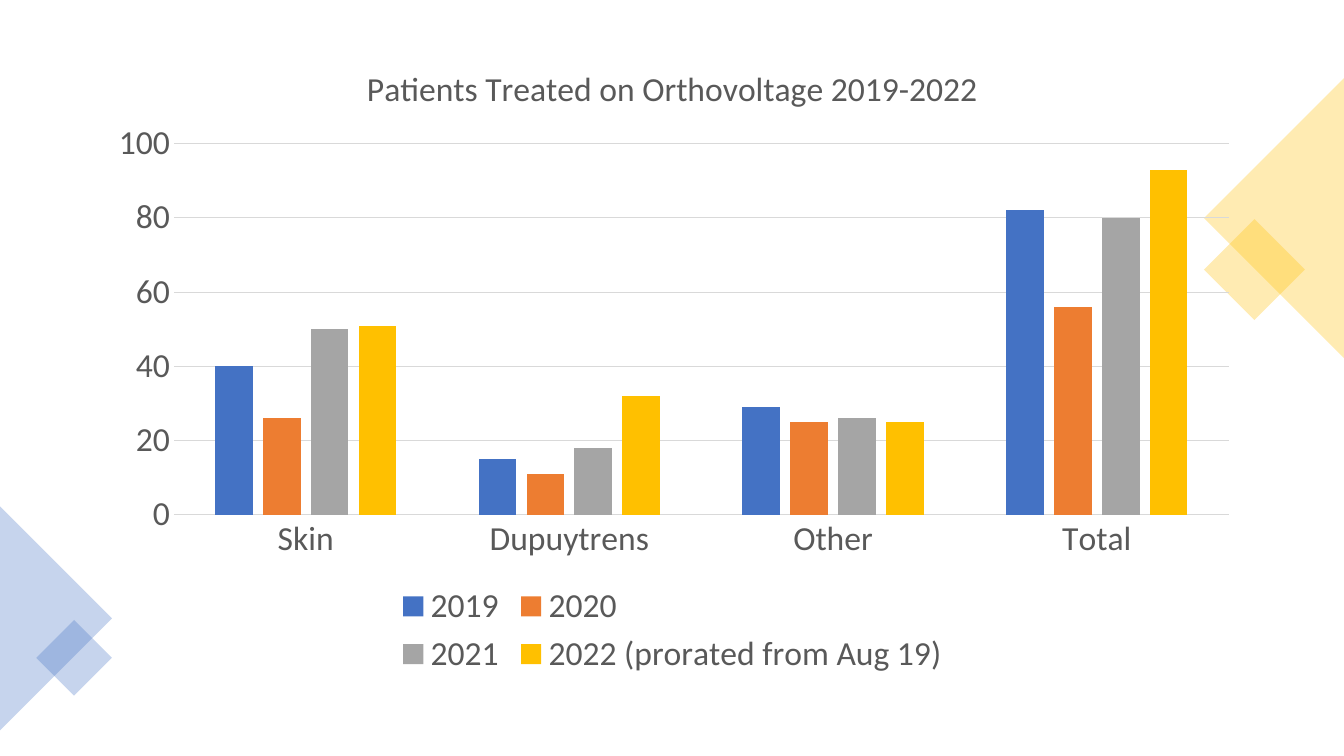
from lxml.etree import SubElement
from pptx import Presentation
from pptx.chart.data import CategoryChartData
from pptx.dml.color import RGBColor
from pptx.enum.chart import XL_CHART_TYPE, XL_LEGEND_POSITION, XL_TICK_MARK
from pptx.enum.shapes import MSO_SHAPE
from pptx.oxml import parse_xml
from pptx.oxml.ns import nsdecls, qn
from pptx.util import Pt

TITLE = "Patients Treated on Orthovoltage 2019-2022"
CATEGORIES = ["Skin", "Dupuytrens", "Other", "Total"]
SERIES = [
    ("2019", [40, 15, 29, 82], "blue"),
    ("2020", [26, 11, 25, 56], "orange"),
    ("2021", [50, 18, 26, 80], "gray"),
    ("2022 (prorated from Aug 19)", [51, 32, 25, 93], "gold"),
]
THEME = {
    "blue": "4472C4", "orange": "ED7D31", "gray": "A5A5A5", "gold": "FFC000",
    "text": "595959", "line": "D9D9D9",
    "font": "Calibri", "size": 24, "line_width": 0.75, "alpha": 30,
}
SLIDE_SIZE = (960, 540)
CHART_BOX = (66.24, 29.52, 828, 457.2)
PLOT_LAYOUT = {"x": 0.07, "y": 0.16, "w": 0.91, "h": 0.58}

# Each corner: colour, rotation, triangle centre and depth, square centre and side
CORNERS = [
    ("gold", 270, (910, 155.8), 100, (896, 192.6), 51),
    ("blue", 90, (40, 441.7), 80, (52.9, 469.9), 38.2),
]


def color(name):
    return RGBColor.from_string(THEME[name])


def set_format(target, values):
    for name, value in values.items():
        setattr(target, name, value)


def style_font(font):
    set_format(font, {"name": THEME["font"], "size": Pt(THEME["size"]), "bold": False})
    font.color.rgb = color("text")


def style_line(line):
    line.color.rgb = color("line")
    line.width = Pt(THEME["line_width"])


def add_diamond_part(slide, preset, center, size, rotation, color_name):
    """Add a translucent, rotated shape placed by its centre."""
    left, top = (middle - length / 2 for middle, length in zip(center, size))
    shape = slide.shapes.add_shape(preset, Pt(left), Pt(top), *map(Pt, size))
    shape.rotation = rotation
    shape.shadow.inherit = False
    shape.line.fill.background()
    shape.fill.solid()
    shape.fill.fore_color.rgb = color(color_name)
    rgb = shape.fill._xPr.find(f".//{qn('a:srgbClr')}")
    SubElement(rgb, qn("a:alpha")).set("val", str(THEME["alpha"] * 1000))


def add_corners(slide):
    for name, turn, triangle_center, depth, square_center, side in CORNERS:
        add_diamond_part(slide, MSO_SHAPE.ISOSCELES_TRIANGLE, triangle_center,
                         (2 * depth, depth), turn, name)
        add_diamond_part(slide, MSO_SHAPE.RECTANGLE, square_center, (side, side), 45, name)


def no_fill():
    return parse_xml(f"<c:spPr {nsdecls('c', 'a')}><a:noFill/><a:ln><a:noFill/></a:ln></c:spPr>")


def place_plot(chart):
    """Fix the inner plot area and make the chart see-through."""
    chart_element = chart.element.find(qn("c:chart"))
    plot_area = chart_element.find(qn("c:plotArea"))
    for old_layout in plot_area.findall(qn("c:layout")):
        plot_area.remove(old_layout)
    layout = parse_xml(f"<c:layout {nsdecls('c')}><c:manualLayout/></c:layout>")
    settings = {"layoutTarget": "inner", "xMode": "edge", "yMode": "edge", **PLOT_LAYOUT}
    for name, value in settings.items():
        SubElement(layout[0], qn(f"c:{name}")).set("val", str(value))
    plot_area.insert(0, layout)
    plot_area.append(no_fill())
    chart_element.addnext(no_fill())


def add_patient_chart(slide):
    data = CategoryChartData()
    data.categories = CATEGORIES
    for name, values, _ in SERIES:
        data.add_series(name, values)
    chart = slide.shapes.add_chart(
        XL_CHART_TYPE.COLUMN_CLUSTERED, *map(Pt, CHART_BOX), data).chart
    style_font(chart.font)

    title_frame = chart.chart_title.text_frame
    title_frame.text = TITLE
    style_font(title_frame.paragraphs[0].runs[0].font)
    chart.chart_title.include_in_layout = False

    chart.has_legend = True
    set_format(chart.legend, {"position": XL_LEGEND_POSITION.BOTTOM, "include_in_layout": False})
    style_font(chart.legend.font)

    plot = chart.plots[0]
    set_format(plot, {"gap_width": 219, "overlap": -27, "vary_by_categories": False})
    for series, (_, _, color_name) in zip(plot.series, SERIES):
        series.format.fill.solid()
        series.format.fill.fore_color.rgb = color(color_name)

    for axis in (chart.category_axis, chart.value_axis):
        set_format(axis, {"major_tick_mark": XL_TICK_MARK.NONE,
                          "minor_tick_mark": XL_TICK_MARK.NONE})
        style_font(axis.tick_labels.font)
    style_line(chart.category_axis.format.line)
    set_format(chart.value_axis, {"minimum_scale": 0, "maximum_scale": 100, "major_unit": 20})
    chart.value_axis.format.line.fill.background()
    style_line(chart.value_axis.major_gridlines.format.line)
    place_plot(chart)


def main():
    presentation = Presentation()
    presentation.slide_width, presentation.slide_height = map(Pt, SLIDE_SIZE)
    slide = presentation.slides.add_slide(presentation.slide_layouts[6])
    add_corners(slide)
    add_patient_chart(slide)
    presentation.save("out.pptx")


if __name__ == "__main__":
    main()
